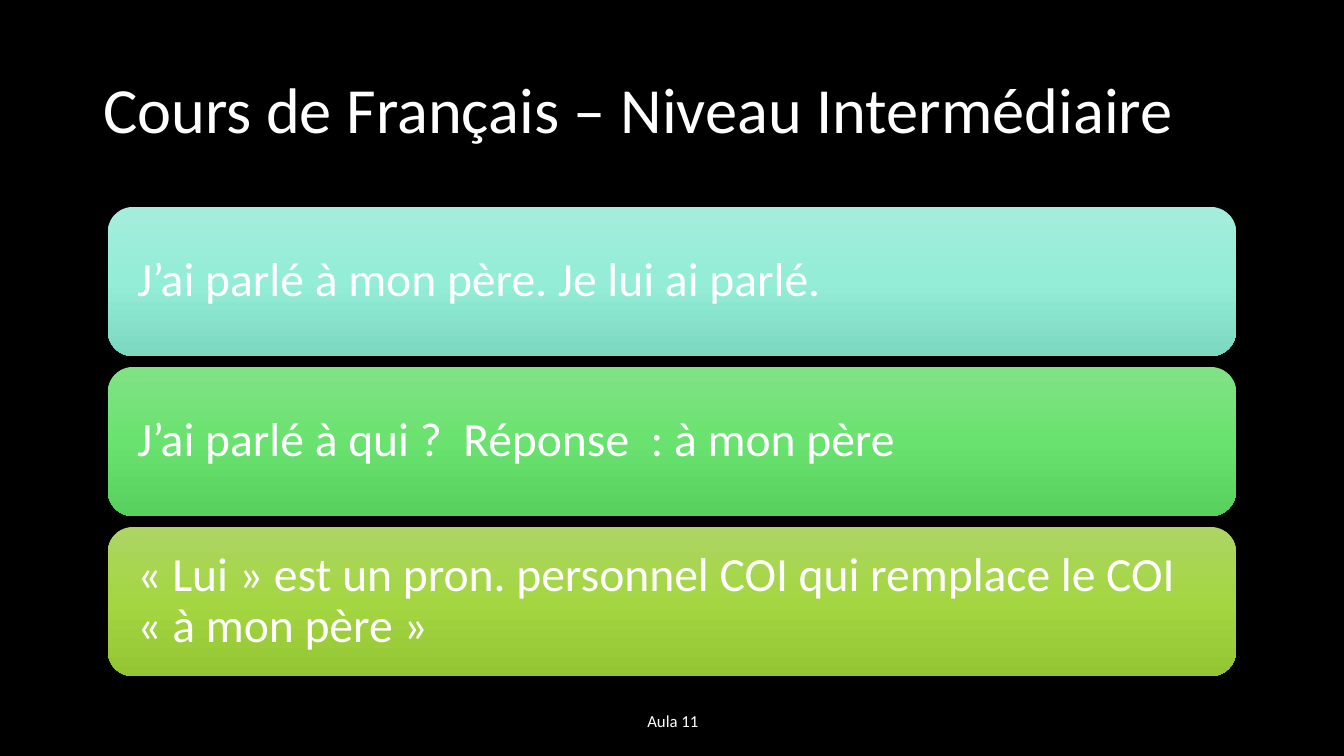
"""Build a French lesson slide with three gradient bars."""
from copy import deepcopy
from dataclasses import dataclass

from pptx import Presentation
from pptx.dml.color import RGBColor as Rgb
from pptx.enum.shapes import MSO_SHAPE as Shape
from pptx.enum.text import MSO_ANCHOR as Anchor, MSO_AUTO_SIZE as Fit, PP_ALIGN as Align
from pptx.oxml.ns import qn
from pptx.util import Pt

TITLE = "Cours de Français – Niveau Intermédiaire"
FOOTER = "Aula 11"
BARS = [
    ("J’ai parlé à mon père. Je lui ai parlé.", ("A4EDDB", "93EDD7", "7DD8C2")),
    ("J’ai parlé à qui ?  Réponse  : à mon père", ("81E285", "6AE26F", "57D05D")),
    ("« Lui » est un pron. personnel COI qui remplace le COI « à mon père »",
     ("ACD564", "A4D642", "94C533")),
]
WIDE, HIGH = 1344, 756
SCALE = 12192000 / WIDE
TITLE_BOX = (93, 40, 1159, 146)
FOOT_BOX = (446, 701, 454, 40)
LEFT, TOP, WIDTH, HEIGHT, GAP = 108, 207, 1128, 149, 11
INSET = 22


@dataclass(frozen=True)
class Theme:
    font: str = "Calibri"
    ink: str = "FFFFFF"
    back: str = "000000"
    title: int = 46
    body: int = 34
    foot: int = 12


THEME = Theme()


def px(*sizes):
    return [round(size * SCALE) for size in sizes]


def write(shape, text, size, align=Align.LEFT, space=0.9):
    frame = shape.text_frame
    frame.text = text
    frame.word_wrap = True
    frame.auto_size = Fit.NONE
    frame.vertical_anchor = Anchor.MIDDLE
    line = frame.paragraphs[0]
    line.alignment = align
    line.line_spacing = space
    font = line.runs[0].font
    font.name, font.size = THEME.font, Pt(size)
    font.color.rgb = Rgb.from_string(THEME.ink)


def shade(shape, colors):
    fill = shape.fill
    fill.gradient()
    fill.gradient_angle = 270
    stops = shape._element.spPr.find(".//" + qn("a:gsLst"))
    stops.insert(1, deepcopy(stops[0]))
    for stop, color, place in zip(fill.gradient_stops, colors, (0, 0.5, 1)):
        stop.color.rgb = Rgb.from_string(color)
        stop.position = place


def add_bar(slide, row, text, colors):
    top = TOP + row * (HEIGHT + GAP)
    bar = slide.shapes.add_shape(Shape.ROUNDED_RECTANGLE, *px(LEFT, top, WIDTH, HEIGHT))
    bar.shadow.inherit = False
    bar.line.fill.background()
    shade(bar, colors)
    write(bar, text, THEME.body)
    frame = bar.text_frame
    frame.margin_left, frame.margin_right = px(INSET, INSET)
    frame.margin_top, frame.margin_bottom = px(INSET, INSET)


def main():
    deck = Presentation()
    deck.slide_width, deck.slide_height = px(WIDE, HIGH)
    slide = deck.slides.add_slide(deck.slide_layouts[5])
    back = slide.background.fill
    back.solid()
    back.fore_color.rgb = Rgb.from_string(THEME.back)

    title = slide.shapes.title
    title.left, title.top, title.width, title.height = px(*TITLE_BOX)
    write(title, TITLE, THEME.title)
    for row, (text, colors) in enumerate(BARS):
        add_bar(slide, row, text, colors)
    foot = slide.shapes.add_textbox(*px(*FOOT_BOX))
    write(foot, FOOTER, THEME.foot, Align.CENTER, 1.0)
    deck.save("out.pptx")


if __name__ == "__main__":
    main()
